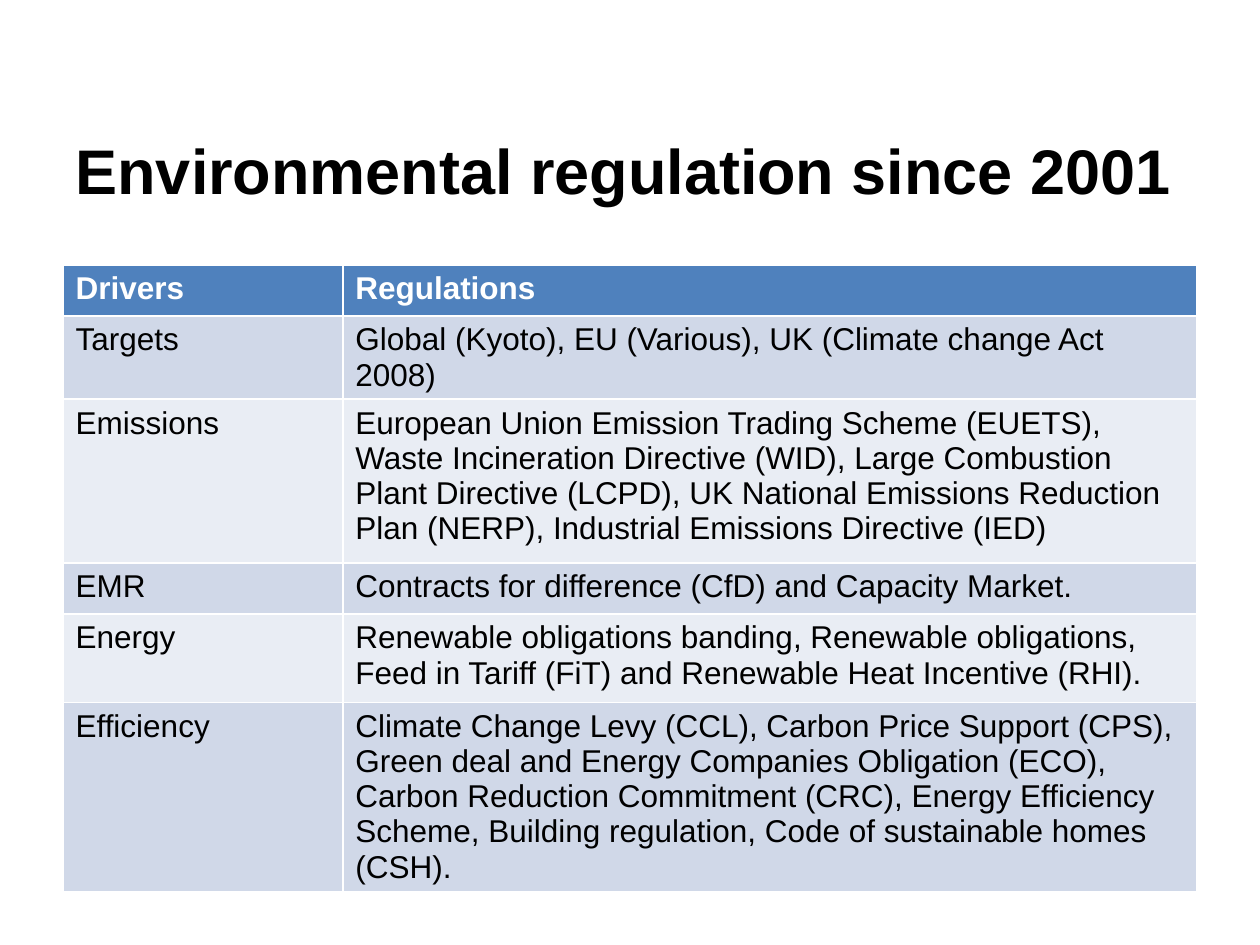
from pptx import Presentation
from pptx.dml.color import RGBColor
from pptx.enum.text import MSO_ANCHOR, PP_ALIGN
from pptx.util import Cm, Pt

FONT = "Arial"
BLACK, WHITE = "000000", "FFFFFF"
HEADER_FILL = "4F81BD"
BAND_FILLS = ("D0D8E8", "E9EDF4")
LEFT, WIDTH = Cm(1.27), Cm(22.86)
COLUMN_WIDTHS = (Cm(5.64), Cm(17.22))
ROW_HEIGHTS = (Cm(1.03), Cm(1.03), Cm(3.3), Cm(1.03), Cm(1.78), Cm(3.3))

ROWS = [
    ("Drivers", "Regulations"),
    ("Targets", "Global (Kyoto), EU (Various), UK (Climate change Act 2008)"),
    ("Emissions",
     "European Union Emission Trading Scheme (EUETS), Waste Incineration "
     "Directive (WID), Large Combustion Plant Directive (LCPD), UK National "
     "Emissions Reduction Plan (NERP), Industrial Emissions Directive (IED)"),
    ("EMR", "Contracts for difference (CfD) and Capacity Market."),
    ("Energy",
     "Renewable obligations banding, Renewable obligations, Feed in Tariff "
     "(FiT) and Renewable Heat Incentive (RHI)."),
    ("Efficiency",
     "Climate Change Levy (CCL), Carbon Price Support (CPS), Green deal and "
     "Energy Companies Obligation (ECO), Carbon Reduction Commitment (CRC), "
     "Energy Efficiency Scheme, Building regulation, Code of sustainable "
     "homes (CSH)."),
]


def rgb(color):
    return RGBColor.from_string(color)


def write_text(tf, text, size=18, color=BLACK, bold=False):
    p = tf.paragraphs[0]
    p.alignment = PP_ALIGN.LEFT
    r = p.add_run()
    r.text = text
    r.font.name = FONT
    r.font.size = Pt(size)
    r.font.bold = bold
    r.font.color.rgb = rgb(color)


def add_title(s, text):
    title = s.shapes.title
    title.left, title.top, title.width, title.height = LEFT, Cm(2.51), WIDTH, Cm(1.8)
    tf = title.text_frame
    tf.word_wrap = True
    tf.vertical_anchor = MSO_ANCHOR.MIDDLE
    write_text(tf, text, size=36, bold=True)


def add_regulation_table(s):
    """The default table style supplies the white cell borders."""
    table = s.shapes.add_table(len(ROWS), len(COLUMN_WIDTHS), LEFT, Cm(5.34),
                               WIDTH, sum(ROW_HEIGHTS)).table
    for column, width in zip(table.columns, COLUMN_WIDTHS):
        column.width = width
    for i, (row, height, texts) in enumerate(zip(table.rows, ROW_HEIGHTS, ROWS)):
        row.height = height
        is_header = i == 0
        fill = HEADER_FILL if is_header else BAND_FILLS[(i - 1) % 2]
        for cell, text in zip(row.cells, texts):
            cell.fill.solid()
            cell.fill.fore_color.rgb = rgb(fill)
            write_text(cell.text_frame, text, bold=is_header,
                       color=WHITE if is_header else BLACK)


def main():
    prs = Presentation()
    prs.slide_width, prs.slide_height = Cm(25.4), Cm(19.05)
    s = prs.slides.add_slide(prs.slide_layouts[5])
    add_title(s, "Environmental regulation since 2001")
    add_regulation_table(s)
    prs.save("out.pptx")


if __name__ == "__main__":
    main()
